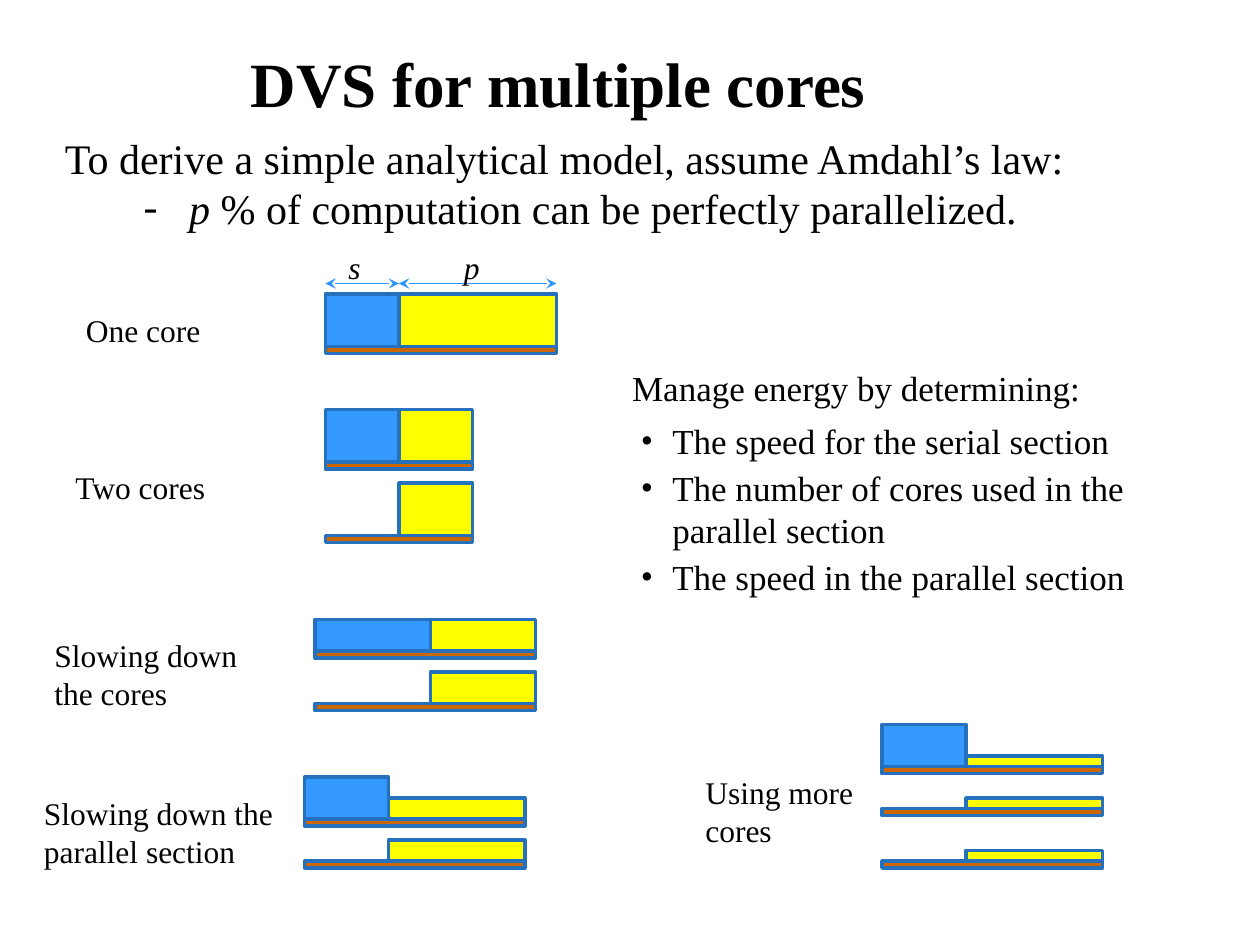
from lxml.etree import SubElement
from pptx import Presentation
from pptx.dml.color import RGBColor as RGB
from pptx.enum.shapes import MSO_CONNECTOR as CONN, MSO_SHAPE as SHAPE
from pptx.enum.text import MSO_ANCHOR as ANCHOR, MSO_AUTO_SIZE as AUTO, PP_ALIGN as ALIGN
from pptx.oxml.ns import qn
from pptx.util import Pt

THEME = {
    "font": "Times New Roman",
    "title": 36, "intro": 24, "body": 20, "label": 18,
    "text": RGB.from_string("000000"),
    "background": RGB.from_string("FFFFFF"),
    "serial": RGB.from_string("3399FF"),
    "parallel": RGB.from_string("FFFF00"),
    "base": RGB.from_string("CC6600"),
    "outline": RGB.from_string("2671BD"),
    "arrow": RGB.from_string("2D96FE"),
}
BASE_HEIGHT = 4
ARROW_Y = 162

TITLE = "DVS for multiple cores"
INTRO = "To derive a simple analytical model, assume Amdahl’s law:"
ASSUMPTION = ("p ", "% of computation can be perfectly parallelized.")
GOALS_HEADING = "Manage energy by determining:"
GOALS = [
    "The speed for the serial section",
    "The number of cores used in the parallel section",
    "The speed in the parallel section",
]
# label, label box, wrap, left edge, serial size, parallel size, baseline of each core
SCHEDULES = [
    ("One core", (42, 174, 80.5, 29), False, 186, (42, 30), (90, 30), [198]),
    ("Two cores", (36, 264, 89.5, 29), False, 186, (42, 30), (42, 30), [264, 306]),
    ("Slowing down the cores", (24, 360, 126, 51), True,
     180, (66, 18), (60, 18), [372, 402]),
    ("Slowing down the parallel section", (18, 450, 156, 51), True,
     174, (48, 24), (78, 12), [468, 492]),
    ("Using more cores", (396, 438, 114, 51), True,
     504, (48, 24), (78, 6), [438, 462, 492]),
]
SPANS = [("s", 186, 228, 192), ("p", 228, 318, 258)]


def place(s, box):
    s.left, s.top, s.width, s.height = map(Pt, box)


def style(p, size, bold=False, italic=False):
    for r in p.runs:
        f = r.font
        f.name, f.size, f.bold, f.italic = THEME["font"], Pt(size), bold, italic
        f.color.rgb = THEME["text"]


def set_bullet(p, char=None, left=0, hang=0):
    pPr = p._p.get_or_add_pPr()
    pPr.set("marL", str(Pt(left)))
    pPr.set("indent", str(-Pt(hang)))
    if char:
        SubElement(pPr, qn("a:buFont")).set("typeface", THEME["font"])
        SubElement(pPr, qn("a:buChar")).set("char", char)
    else:
        SubElement(pPr, qn("a:buNone"))


def add_text(slide, text, box, size, wrap=True, italic=False):
    tf = slide.shapes.add_textbox(*map(Pt, box)).text_frame
    tf.word_wrap = wrap
    tf.text = text
    style(tf.paragraphs[0], size, italic=italic)
    return tf


def add_bar(slide, box, color):
    s = slide.shapes.add_shape(SHAPE.RECTANGLE, *map(Pt, box))
    s.shadow.inherit = False
    s.fill.solid()
    s.fill.fore_color.rgb = color
    s.line.color.rgb = THEME["outline"]
    s.line.width = Pt(2)


def add_schedule(slide, label, box, wrap, left, serial, parallel, baselines):
    split = left + serial[0]
    for i, y in enumerate(baselines):
        if i == 0:
            add_bar(slide, (left, y - serial[1], *serial), THEME["serial"])
        add_bar(slide, (split, y - parallel[1], *parallel), THEME["parallel"])
        add_bar(slide, (left, y, serial[0] + parallel[0], BASE_HEIGHT), THEME["base"])
    add_text(slide, label, box, THEME["label"], wrap)


def add_span(slide, label, start, end, label_left):
    s = slide.shapes.add_connector(
        CONN.STRAIGHT, Pt(start), Pt(ARROW_Y), Pt(end), Pt(ARROW_Y))
    s.line.color.rgb = THEME["arrow"]
    s.line.width = Pt(0.75)
    ln = s.line._get_or_add_ln()
    for tag in ("a:headEnd", "a:tailEnd"):
        SubElement(ln, qn(tag)).set("type", "stealth")
    SubElement(s._element.spPr, qn("a:effectLst"))
    add_text(slide, label, (label_left, 138, 24, 29), THEME["label"], False, True)


def add_title(slide):
    s = slide.shapes.title
    place(s, (42, 18, 554, 67))
    s.fill.solid()
    s.fill.fore_color.rgb = THEME["background"]
    tf = s.text_frame
    tf.text = TITLE
    tf.auto_size = AUTO.NONE
    tf.vertical_anchor = ANCHOR.TOP
    tf.margin_top = Pt(7.7)
    p = tf.paragraphs[0]
    p.alignment = ALIGN.CENTER
    style(p, THEME["title"], bold=True)


def add_intro(slide):
    tf = add_text(slide, INTRO, (30, 72, 594, 65), THEME["intro"])
    p = tf.add_paragraph()
    set_bullet(p, "-", 71, 26)
    for text in ASSUMPTION:
        p.add_run().text = text
    style(p, THEME["intro"])
    p.runs[0].font.italic = True


def add_goals(slide):
    s = slide.placeholders[1]
    place(s, (354, 206, 354, 140))
    tf = s.text_frame
    tf.text = "\n".join([GOALS_HEADING, *GOALS])
    tf.auto_size = AUTO.NONE
    for p, before in zip(tf.paragraphs, (0, 6, 3, 3)):
        p.space_before = Pt(before)
        if before:
            set_bullet(p, "•", 23, 18)
        else:
            set_bullet(p)
        style(p, THEME["body"])


def main():
    prs = Presentation()
    prs.slide_width, prs.slide_height = Pt(720), Pt(540)
    slide = prs.slides.add_slide(prs.slide_layouts[1])
    add_title(slide)
    add_goals(slide)
    add_intro(slide)
    for schedule in SCHEDULES:
        add_schedule(slide, *schedule)
    for span in SPANS:
        add_span(slide, *span)
    prs.save("out.pptx")


if __name__ == "__main__":
    main()
